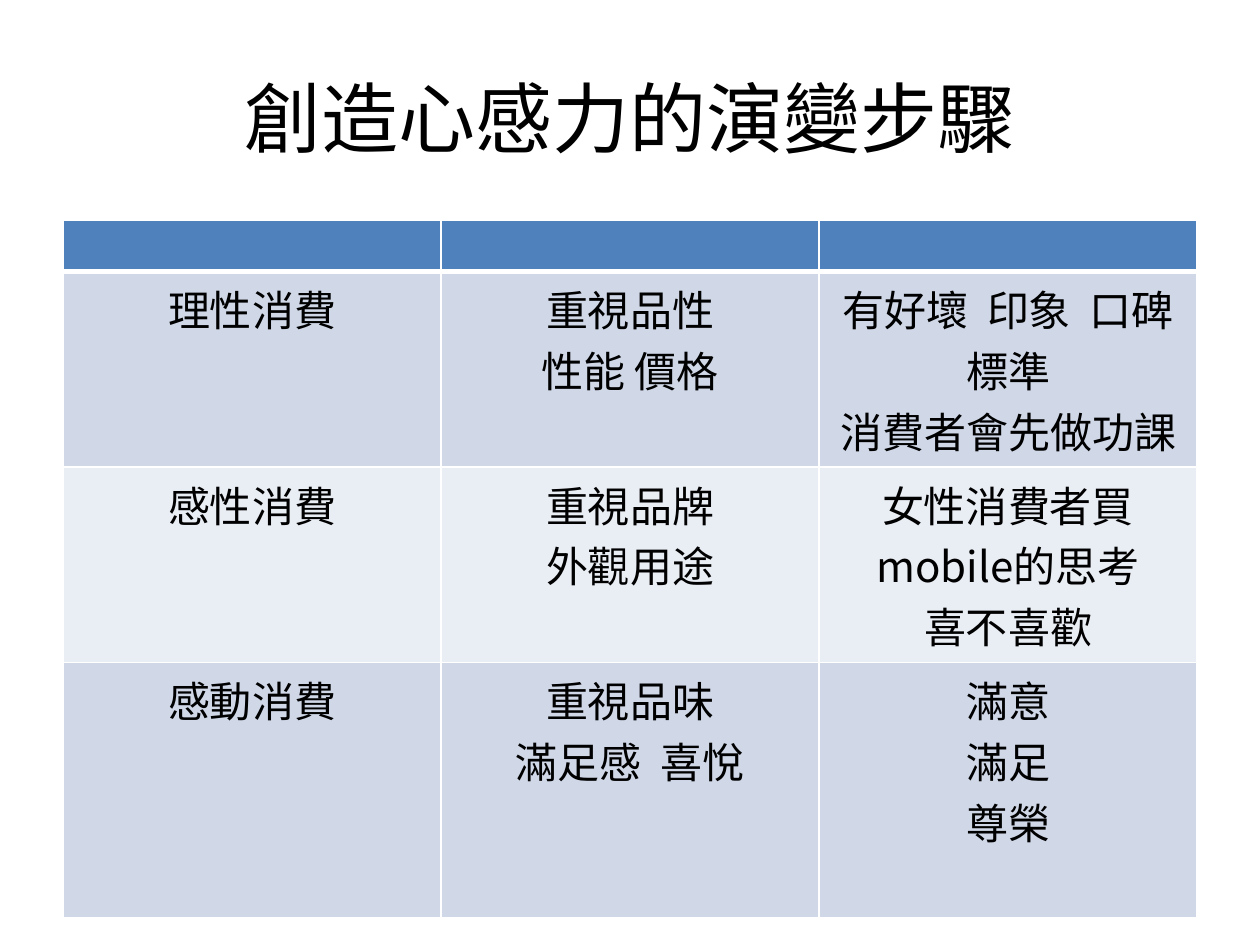
from pptx import Presentation
from pptx.dml.color import RGBColor
from pptx.enum.text import MSO_ANCHOR, PP_ALIGN
from pptx.util import Inches, Pt
from lxml.etree import SubElement
from pptx.oxml.ns import qn

FONT = "Noto Sans CJK SC"
COLORS = {"text": "000000", "header": "4F81BD", "dark": "D0D8E8", "light": "E9EDF4", "border": "FFFFFF"}


def write_text(frame, text, size=24, color="text", align=PP_ALIGN.CENTER):
    frame.text = text
    for para in frame.paragraphs:
        para.alignment = align
        for span in para.runs:
            span.font.size = Pt(size)
            span.font.name = FONT
            span.font.bold = False
            span.font.color.rgb = RGBColor.from_string(COLORS[color])
            SubElement(span.font._element, qn("a:ea"), typeface=FONT)


def add_border(cell, side, width):
    line = SubElement(cell._tc.get_or_add_tcPr(), qn(f"a:ln{side}"), w=str(Pt(width)))
    fill = SubElement(line, qn("a:solidFill"))
    SubElement(fill, qn("a:srgbClr"), val=COLORS["border"])


deck = Presentation()
deck.slide_width, deck.slide_height = Inches(10), Inches(7.5)
page = deck.slides.add_slide(deck.slide_layouts[5])

title = page.shapes.title
title.left, title.top, title.width, title.height = Inches(0.5), Inches(0.3), Inches(9), Inches(1.25)
title.text_frame.vertical_anchor = MSO_ANCHOR.MIDDLE
write_text(title.text_frame, "創造心感力的演變步驟", size=44)

rows = [
    ("header", 0.4, ["", "", ""]),
    ("dark", 1.55, ["理性消費", "重視品性\n性能 價格", "有好壞  印象  口碑標準\n消費者會先做功課"]),
    ("light", 1.55, ["感性消費", "重視品牌\n外觀用途", "女性消費者買mobile的思考\n喜不喜歡"]),
    ("dark", 2.03, ["感動消費", "重視品味\n滿足感  喜悅", "滿意\n滿足\n尊榮"]),
]
total_height = sum(height for _, height, _ in rows)
table = page.shapes.add_table(len(rows), 3, Inches(0.5), Inches(1.75), Inches(9), Inches(total_height)).table

for row, (fill, height, texts) in enumerate(rows):
    table.rows[row].height = Inches(height)
    for column, text in enumerate(texts):
        cell = table.cell(row, column)
        for side in "LRTB":
            add_border(cell, side, 3 if fill == "header" and side == "B" else 1)
        cell.fill.solid()
        cell.fill.fore_color.rgb = RGBColor.from_string(COLORS[fill])
        if text:
            write_text(cell.text_frame, text)

deck.save("out.pptx")
